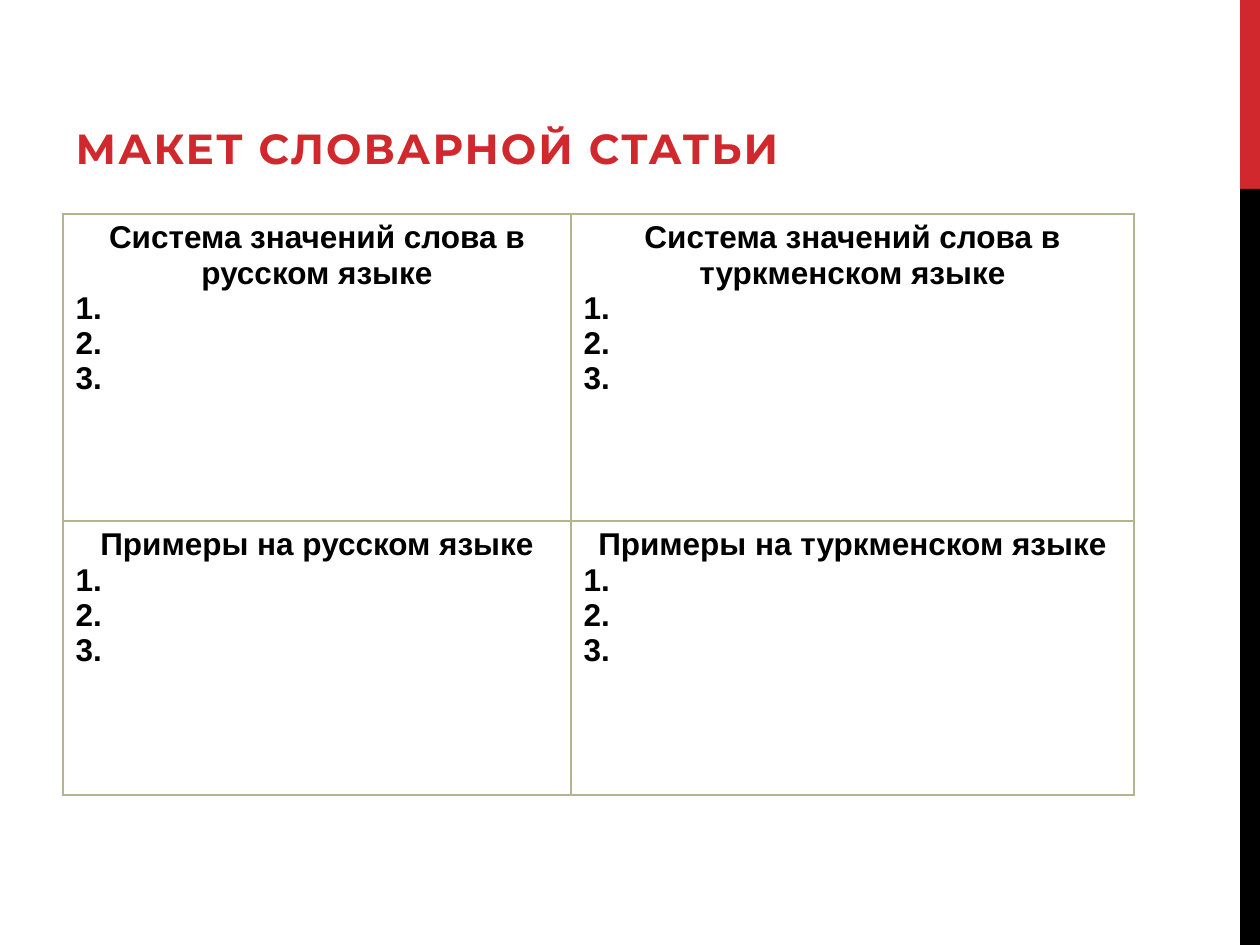
from lxml import etree
from pptx import Presentation
from pptx.dml.color import RGBColor
from pptx.enum.shapes import MSO_SHAPE
from pptx.enum.text import MSO_ANCHOR, MSO_AUTO_SIZE, PP_ALIGN
from pptx.oxml.ns import qn
from pptx.util import Pt

RECT = MSO_SHAPE.RECTANGLE
LEFT, CENTER = PP_ALIGN.LEFT, PP_ALIGN.CENTER
BOTTOM = MSO_ANCHOR.BOTTOM
FIXED = MSO_AUTO_SIZE.NONE
SCALE = 914400 / 126
COLORS = {"red": "D1282E", "black": "000000", "white": "FFFFFF", "line": "B4B392"}


def px(size):
    return round(size * SCALE)


def color(name):
    return RGBColor.from_string(COLORS[name])


def write(par, text, font="Arial", size=18, ink="black", align=LEFT, gap=0):
    par.alignment = align
    run = par.add_run()
    run.text = text
    run.font.name = font
    run.font.size = Pt(size)
    run.font.bold = True
    run.font.color.rgb = color(ink)
    if gap:
        run._r.get_or_add_rPr().set("spc", str(gap))


class Page:
    def __init__(self, deck):
        self.slide = deck.slides.add_slide(deck.slide_layouts[5])

    def bar(self, x, y, w, h, ink):
        bar = self.slide.shapes.add_shape(RECT, px(x), px(y), px(w), px(h))
        bar.shadow.inherit = False
        bar.fill.solid()
        bar.fill.fore_color.rgb = color(ink)
        bar.line.fill.background()

    def title(self, x, y, w, h, text):
        title = self.slide.shapes.title
        title.left, title.top, title.width, title.height = map(px, (x, y, w, h))
        frame = title.text_frame
        frame.word_wrap = True
        frame.auto_size = FIXED
        frame.vertical_anchor = BOTTOM
        write(frame.paragraphs[0], text, font="Montserrat", size=24, ink="red", gap=120)

    def border(self, cell):
        props = cell._tc.get_or_add_tcPr()
        for side in ("lnL", "lnR", "lnT", "lnB"):
            line = etree.SubElement(props, qn(f"a:{side}"), w=str(Pt(1)))
            fill = etree.SubElement(line, qn("a:solidFill"))
            etree.SubElement(fill, qn("a:srgbClr"), val=COLORS["line"])

    def cell(self, cell, head, items):
        self.border(cell)
        cell.fill.solid()
        cell.fill.fore_color.rgb = color("white")
        frame = cell.text_frame
        write(frame.paragraphs[0], head, align=CENTER)
        for item in items:
            write(frame.add_paragraph(), item)

    def table(self, x, y, cols, rows, heads, items):
        table = self.slide.shapes.add_table(
            len(rows), len(cols), px(x), px(y), px(sum(cols)), px(sum(rows))
        ).table
        table.first_row = table.horz_banding = False
        for col, width in zip(table.columns, cols):
            col.width = px(width)
        for row, height, texts in zip(table.rows, rows, heads):
            row.height = px(height)
            for cell, head in zip(row.cells, texts):
                self.cell(cell, head, items)


def main():
    deck = Presentation()
    deck.slide_width, deck.slide_height = px(1260), px(945)
    page = Page(deck)
    page.bar(1240, 0, 20, 189, "red")
    page.bar(1240, 189, 20, 756, "black")
    page.title(63, 32, 1071, 147, "МАКЕТ СЛОВАРНОЙ СТАТЬИ")
    heads = [
        ["Система значений слова в русском языке", "Система значений слова в туркменском языке"],
        ["Примеры на русском языке", "Примеры на туркменском языке"],
    ]
    page.table(63, 214, (508, 563), (307, 274), heads, ("1.", "2.", "3."))
    deck.save("out.pptx")


if __name__ == "__main__":
    main()
